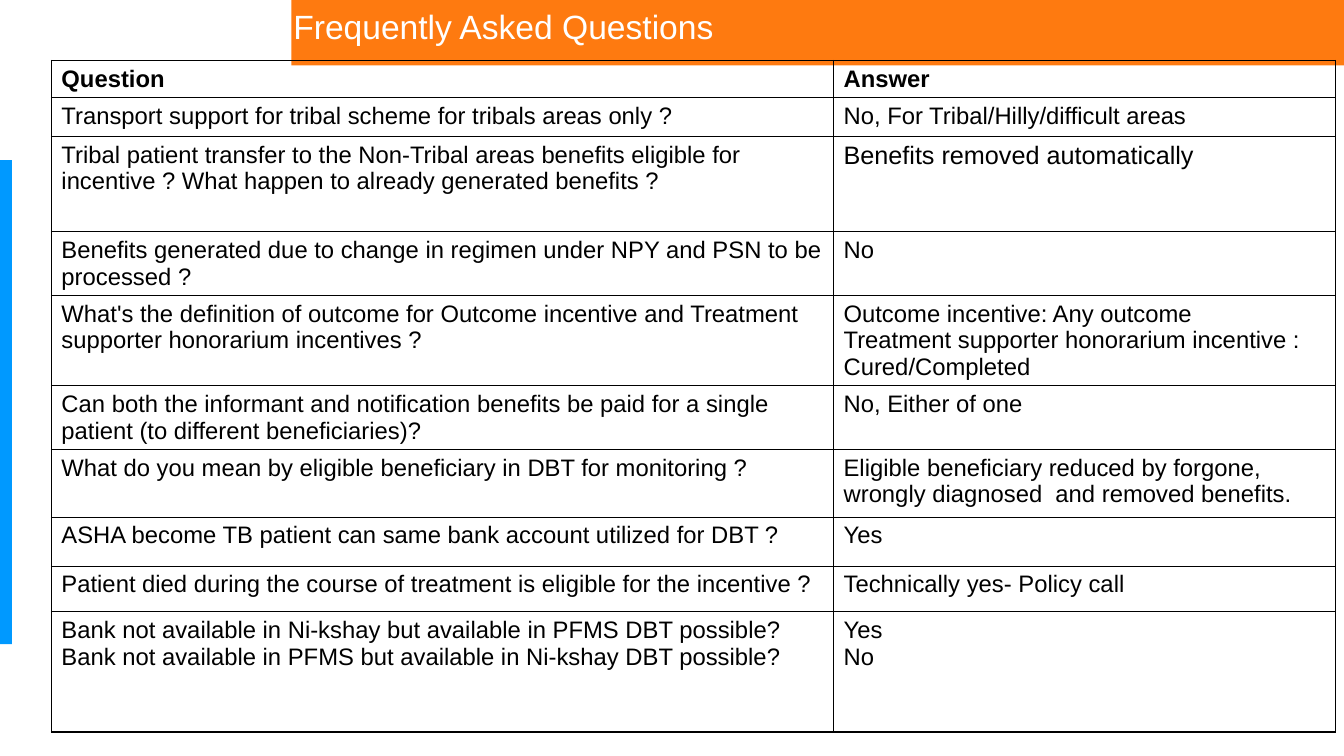
from lxml.etree import SubElement
from pptx import Presentation
from pptx.dml.color import RGBColor
from pptx.enum.shapes import MSO_SHAPE
from pptx.enum.text import MSO_ANCHOR, MSO_AUTO_SIZE, PP_ALIGN
from pptx.oxml.ns import qn
from pptx.util import Pt


def rgb(value):
    return RGBColor.from_string(value)


def write(frame, text, size=17, color="000000", bold=False):
    frame.word_wrap = True
    frame.vertical_anchor = MSO_ANCHOR.TOP
    frame.text = text
    for paragraph in frame.paragraphs:
        paragraph.alignment = PP_ALIGN.LEFT
        for run in paragraph.runs:
            run.font.name = "Arial"
            run.font.size = Pt(size)
            run.font.bold = bold
            run.font.color.rgb = rgb(color)


deck = Presentation()
deck.slide_width, deck.slide_height = Pt(960), Pt(540)
slide = deck.slides.add_slide(deck.slide_layouts[5])

heading = slide.shapes.title
heading.left, heading.top, heading.width, heading.height = Pt(202.3), Pt(0.7), Pt(757.4), Pt(59)
write(heading.text_frame, "Frequently Asked Questions", size=24, color="FFFFFF")
heading.text_frame.auto_size = MSO_AUTO_SIZE.NONE

bands = [
    (208.1, 0, 753.8, 46.8, "FE7A10"),
    (0, 114.5, 8.6, 345.6, "0099FF"),
]
for left, top, width, height, color in bands:
    band = slide.shapes.add_shape(MSO_SHAPE.RECTANGLE, Pt(left), Pt(top), Pt(width), Pt(height))
    band.shadow.inherit = False
    band.fill.solid()
    band.fill.fore_color.rgb = rgb(color)
    band.line.fill.background()
    heading.element.addprevious(band.element)

faq = [
    (26, "Question", "Answer"),
    (28, "Transport support for tribal scheme for tribals areas only ?",
     "No, For Tribal/Hilly/difficult areas"),
    (68, "Tribal patient transfer to the Non-Tribal areas benefits eligible for incentive ? "
     "What happen to already generated benefits ?",
     "Benefits removed automatically"),
    (45.5, "Benefits generated due to change in regimen under NPY and PSN to be processed ?", "No"),
    (64.5, "What's the definition of outcome for Outcome incentive and Treatment supporter "
     "honorarium incentives ?",
     "Outcome incentive: Any outcome\nTreatment supporter honorarium incentive : Cured/Completed"),
    (45.5, "Can both the informant and notification benefits be paid for a single patient "
     "(to different beneficiaries)?",
     "No, Either of one"),
    (48.5, "What do you mean by eligible beneficiary in DBT for monitoring ?",
     "Eligible beneficiary reduced by forgone, wrongly diagnosed  and removed benefits."),
    (35, "ASHA become TB patient can same bank account utilized for DBT ?", "Yes"),
    (32.5, "Patient died during the course of treatment is eligible for the incentive ?",
     "Technically yes- Policy call"),
    (86, "Bank not available in Ni-kshay but available in PFMS DBT possible?\n"
     "Bank not available in PFMS but available in Ni-kshay DBT possible?",
     "Yes\nNo"),
]
total_height = sum(height for height, *_ in faq)
table = slide.shapes.add_table(len(faq), 2, Pt(36.7), Pt(43.2), Pt(917.3), Pt(total_height)).table
table.first_row = table.horz_banding = False
table.columns[0].width, table.columns[1].width = Pt(558.7), Pt(358.6)

for row_index, (height, *texts) in enumerate(faq):
    table.rows[row_index].height = Pt(height)
    for column_index, text in enumerate(texts):
        cell = table.cell(row_index, column_index)
        size = 18 if (row_index, column_index) == (2, 1) else 17
        write(cell.text_frame, text, size=size, bold=row_index == 0)
        cell.vertical_anchor = MSO_ANCHOR.TOP
        properties = cell._tc.get_or_add_tcPr()
        for side in ("a:lnL", "a:lnR", "a:lnT", "a:lnB"):
            border = SubElement(properties, qn(side), w=str(Pt(1)))
            ink = SubElement(border, qn("a:solidFill"))
            SubElement(ink, qn("a:srgbClr"), val="000000")
        cell.fill.background()

deck.save("out.pptx")
